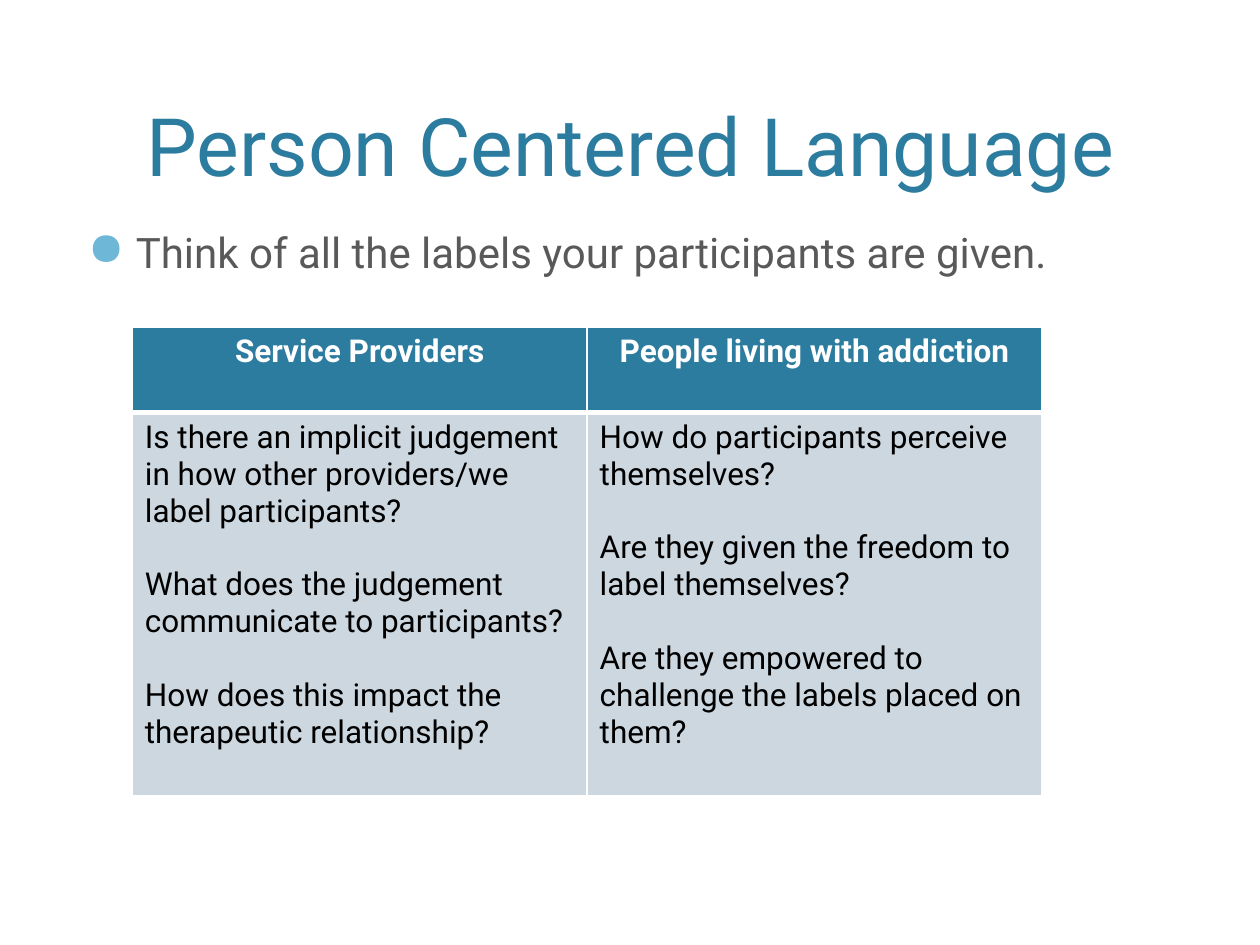
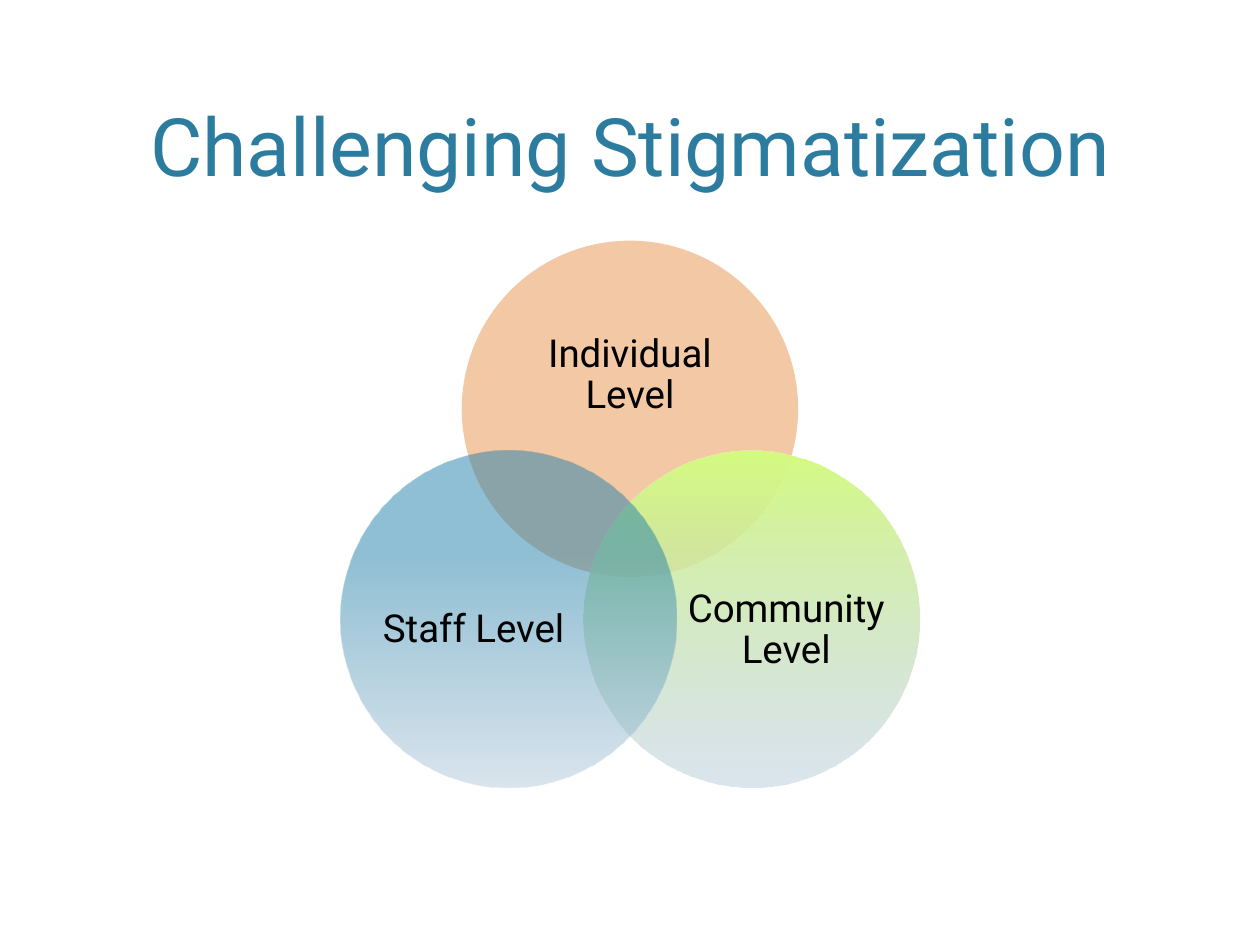
from lxml.etree import SubElement
from pptx import Presentation
from pptx.dml.color import RGBColor
from pptx.enum.shapes import MSO_SHAPE
from pptx.enum.text import MSO_ANCHOR, PP_ALIGN
from pptx.oxml.ns import qn
from pptx.util import Inches, Pt

SLIDE_WIDTH, SLIDE_HEIGHT = Inches(10), Inches(7.5)
FONT = "Roboto"
COLORS = {
    "teal": "2C7C9F",
    "bullet": "6FB7D7",
    "gray": "595959",
    "white": "FFFFFF",
    "black": "000000",
    "cell": "CDD7DF",
    "peach": "F3C8A5",
    "lime": "D5FB82",
    "blue": "2080AB",
    "mist": "B8CCDC",
}
TABLE_COLUMNS = {
    "Service Providers": [
        "Is there an implicit judgement in how other providers/we label participants?",
        "What does the judgement communicate to participants?",
        "How does this impact the therapeutic relationship?",
    ],
    "People living with addiction": [
        "How do participants perceive themselves?",
        "Are they given the freedom to label themselves?",
        "Are they empowered to challenge the labels placed on them?",
    ],
}


def color(name):
    return RGBColor.from_string(COLORS[name])


def across(percent):
    """Length as a percentage of the slide's width."""
    return round(SLIDE_WIDTH * percent / 100)


def down(percent):
    """Length as a percentage of the slide's height."""
    return round(SLIDE_HEIGHT * percent / 100)


def area(left, top, width, height):
    return across(left), down(top), across(width), down(height)


def write(frame, *texts, size, ink="black", bold=False, align=PP_ALIGN.LEFT,
          line_spacing=None, gap=0):
    """Fill a text frame with one paragraph per text, gap points apart."""
    for index, text in enumerate(texts):
        paragraph = frame.add_paragraph() if index else frame.paragraphs[0]
        paragraph.alignment = align
        if line_spacing:
            paragraph.line_spacing = line_spacing
        if index:
            paragraph.space_before = Pt(gap)
        run = paragraph.add_run()
        run.text = text
        run.font.name = FONT
        run.font.size = Pt(size)
        run.font.bold = bold
        run.font.color.rgb = color(ink)


def add_text(slide, place, text, anchor=MSO_ANCHOR.TOP, inset=True, **text_format):
    frame = slide.shapes.add_textbox(*area(*place)).text_frame
    frame.word_wrap = True
    frame.vertical_anchor = anchor
    if not inset:
        frame.margin_left = frame.margin_right = 0
        frame.margin_top = frame.margin_bottom = 0
    write(frame, text, **text_format)
    return frame


def add_titled_slide(presentation, title):
    slide = presentation.slides.add_slide(presentation.slide_layouts[6])
    add_text(slide, (6, 1.6, 88, 19.47), title, anchor=MSO_ANCHOR.BOTTOM,
             size=46, ink="teal", align=PP_ALIGN.CENTER)
    return slide


def add_bullet(paragraph):
    properties = paragraph._p.get_or_add_pPr()
    properties.set("marL", str(Inches(0.38)))
    properties.set("indent", str(-Inches(0.38)))
    bullet_color = SubElement(properties, qn("a:buClr"))
    SubElement(bullet_color, qn("a:srgbClr"), val=COLORS["bullet"])
    SubElement(properties, qn("a:buSzPct"), val="110000")
    SubElement(properties, qn("a:buChar"), char="●")


def set_borders(cell, **widths):
    """Draw white cell borders; they must come before the fill."""
    properties = cell._tc.get_or_add_tcPr()
    for index, side in enumerate("LRTB"):
        line = SubElement(properties, qn(f"a:ln{side}"), w=str(Pt(widths.get(side, 1))))
        fill = SubElement(line, qn("a:solidFill"))
        SubElement(fill, qn("a:srgbClr"), val=COLORS["white"])
        properties.insert(index, line)


def fill_cell(cell, fill, *texts, borders, **text_format):
    cell.fill.solid()
    cell.fill.fore_color.rgb = color(fill)
    set_borders(cell, **borders)
    write(cell.text_frame, *texts, size=18, **text_format)


def add_question_table(slide):
    place = area(10.5, 34.6, 72.2, 49.6)
    table = slide.shapes.add_table(2, len(TABLE_COLUMNS), *place).table
    table.rows[0].height, table.rows[1].height = down(9.07), down(40.53)
    for column, (heading, questions) in enumerate(TABLE_COLUMNS.items()):
        fill_cell(table.cell(0, column), "teal", heading, borders={"B": 3},
                  ink="white", bold=True, align=PP_ALIGN.CENTER)
        fill_cell(table.cell(1, column), "cell", *questions, borders={"T": 3}, gap=21.1)


def apply_gradient(shape, stops):
    """Fill from top to bottom; each stop is position, color name, opacity."""
    shape.fill.gradient()
    shape.fill.gradient_angle = 270
    for stop, (position, name, opacity) in zip(shape.fill.gradient_stops, stops):
        stop.position = position
        stop.color.rgb = color(name)
    tints = shape.element.spPr.iter(qn("a:srgbClr"))
    for tint, (position, name, opacity) in zip(tints, stops):
        SubElement(tint, qn("a:alpha"), val=str(round(opacity * 100000)))


def add_circle(slide, center, top, stops):
    diameter = across(26.7)
    shape = slide.shapes.add_shape(MSO_SHAPE.OVAL, across(center) - diameter // 2,
                                   down(top), diameter, diameter)
    shape.shadow.inherit = False
    shape.line.fill.background()
    if len(stops) > 1:
        apply_gradient(shape, stops)
    else:
        shape.fill.solid()
        shape.fill.fore_color.rgb = color(stops[0][1])


def add_level_diagram(slide):
    middle, offset = 50, 9.65
    upper_top, lower_top = 25.47, 47.73
    fade = (1, "mist", 0.5)
    levels = [
        ("Individual Level", middle, upper_top, [(0, "peach", 1)],
         (40.2, 31.73, 19.6, 16)),
        ("Community Level", middle + offset, lower_top, [(0, "lime", 1), fade],
         (54.4, 56.93, 16, 19.6)),
        ("Staff Level", middle - offset, lower_top, [(0.31, "blue", 0.5), fade],
         (29.6, 56.93, 16, 19.6)),
    ]
    for label, center, top, stops, label_place in levels:
        add_circle(slide, center, top, stops)
        add_text(slide, label_place, label, anchor=MSO_ANCHOR.MIDDLE, inset=False,
                 size=22, align=PP_ALIGN.CENTER, line_spacing=0.9)


def main():
    presentation = Presentation()
    presentation.slide_width, presentation.slide_height = SLIDE_WIDTH, SLIDE_HEIGHT

    language = add_titled_slide(presentation, "Person Centered Language")
    prompt = add_text(language, (6, 23.33, 88, 63.33),
                      "Think of all the labels your participants are given.",
                      size=24, ink="gray")
    add_bullet(prompt.paragraphs[0])
    add_question_table(language)

    stigma = add_titled_slide(presentation, "Challenging Stigmatization")
    add_level_diagram(stigma)

    presentation.save("out.pptx")


if __name__ == "__main__":
    main()
